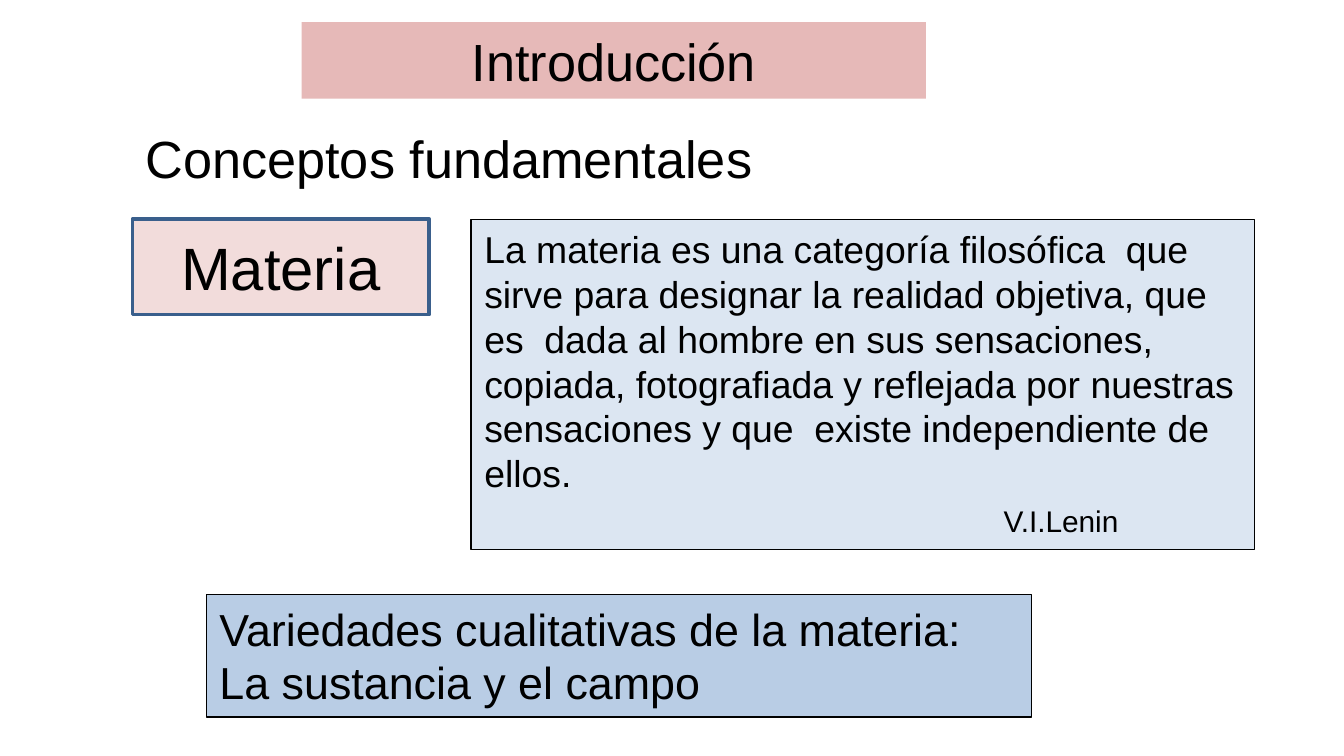
from pptx import Presentation
from pptx.dml.color import RGBColor
from pptx.enum.shapes import MSO_SHAPE
from pptx.enum.text import MSO_ANCHOR, MSO_AUTO_SIZE, PP_ALIGN
from pptx.util import Emu, Pt

PX = 4572  # 200 px to the inch
FONT = "Arial"
TITLE_ONLY = 5
RECTANGLE = MSO_SHAPE.RECTANGLE
LEFT, CENTER = PP_ALIGN.LEFT, PP_ALIGN.CENTER
TOP, MIDDLE = MSO_ANCHOR.TOP, MSO_ANCHOR.MIDDLE
NO_AUTOFIT = MSO_AUTO_SIZE.NONE

BLACK = RGBColor(0x00, 0x00, 0x00)
ROSE = RGBColor(0xE6, 0xB9, 0xB8)
PALE_ROSE = RGBColor(0xF2, 0xDC, 0xDB)
PALE_BLUE = RGBColor(0xDC, 0xE6, 0xF2)
LIGHT_BLUE = RGBColor(0xB9, 0xCD, 0xE5)
STEEL_BLUE = RGBColor(0x3A, 0x5F, 0x8C)

DEFINITION = (
    "La materia es una categoría filosófica  que sirve para designar la "
    "realidad objetiva, que es  dada al hombre en sus sensaciones, copiada, "
    "fotografiada y reflejada por nuestras sensaciones y que  existe "
    "independiente de ellos."
)


def px(*lengths):
    return [Emu(length * PX) for length in lengths]


def write(shape, text, size, alignment=LEFT, anchor=TOP):
    frame = shape.text_frame
    frame.text = text
    frame.word_wrap = True
    frame.auto_size = NO_AUTOFIT
    frame.vertical_anchor = anchor
    for paragraph in frame.paragraphs:
        paragraph.alignment = alignment
        for run in paragraph.runs:
            run.font.name = FONT
            run.font.size = Pt(size)
            run.font.color.rgb = BLACK


def add_panel(slide, box, fill, line_color, line_width):
    panel = slide.shapes.add_shape(RECTANGLE, *px(*box))
    panel.shadow.inherit = False
    panel.fill.solid()
    panel.fill.fore_color.rgb = fill
    panel.line.color.rgb = line_color
    panel.line.width = Pt(line_width)
    return panel


def place_title(slide, box):
    title = slide.shapes.title
    title.left, title.top, title.width, title.height = px(*box)
    title.fill.solid()
    title.fill.fore_color.rgb = ROSE
    write(title, "Introducción", 28, CENTER)


def add_subtitle(slide, box):
    subtitle = slide.shapes.add_textbox(*px(*box))
    write(subtitle, "Conceptos fundamentales", 28)


def add_term(slide, box):
    term = add_panel(slide, box, PALE_ROSE, STEEL_BLUE, 2)
    write(term, "Materia", 32, CENTER, MIDDLE)


def add_quotation(slide, box):
    quotation = add_panel(slide, box, PALE_BLUE, BLACK, 0.75)
    write(quotation, DEFINITION + "\nV.I.Lenin", 20)
    author = quotation.text_frame.paragraphs[-1]
    author.space_before = Pt(4)
    author.runs[0].font.size = Pt(16)
    (indent,) = px(773)
    author._p.get_or_add_pPr().set("marL", str(indent))


def add_varieties(slide, box):
    varieties = add_panel(slide, box, LIGHT_BLUE, BLACK, 0.75)
    write(varieties,
          "Variedades cualitativas de la materia:\nLa sustancia y el campo", 24)


def main():
    presentation = Presentation()
    presentation.slide_width, presentation.slide_height = px(2000, 1125)
    slide = presentation.slides.add_slide(presentation.slide_layouts[TITLE_ONLY])
    place_title(slide, (449, 33, 929, 114))
    add_subtitle(slide, (197, 178, 992, 114))
    add_term(slide, (197, 326, 442, 142))
    add_quotation(slide, (701, 327, 1166, 491))
    add_varieties(slide, (307, 885, 1228, 182))
    presentation.save("out.pptx")


if __name__ == "__main__":
    main()
